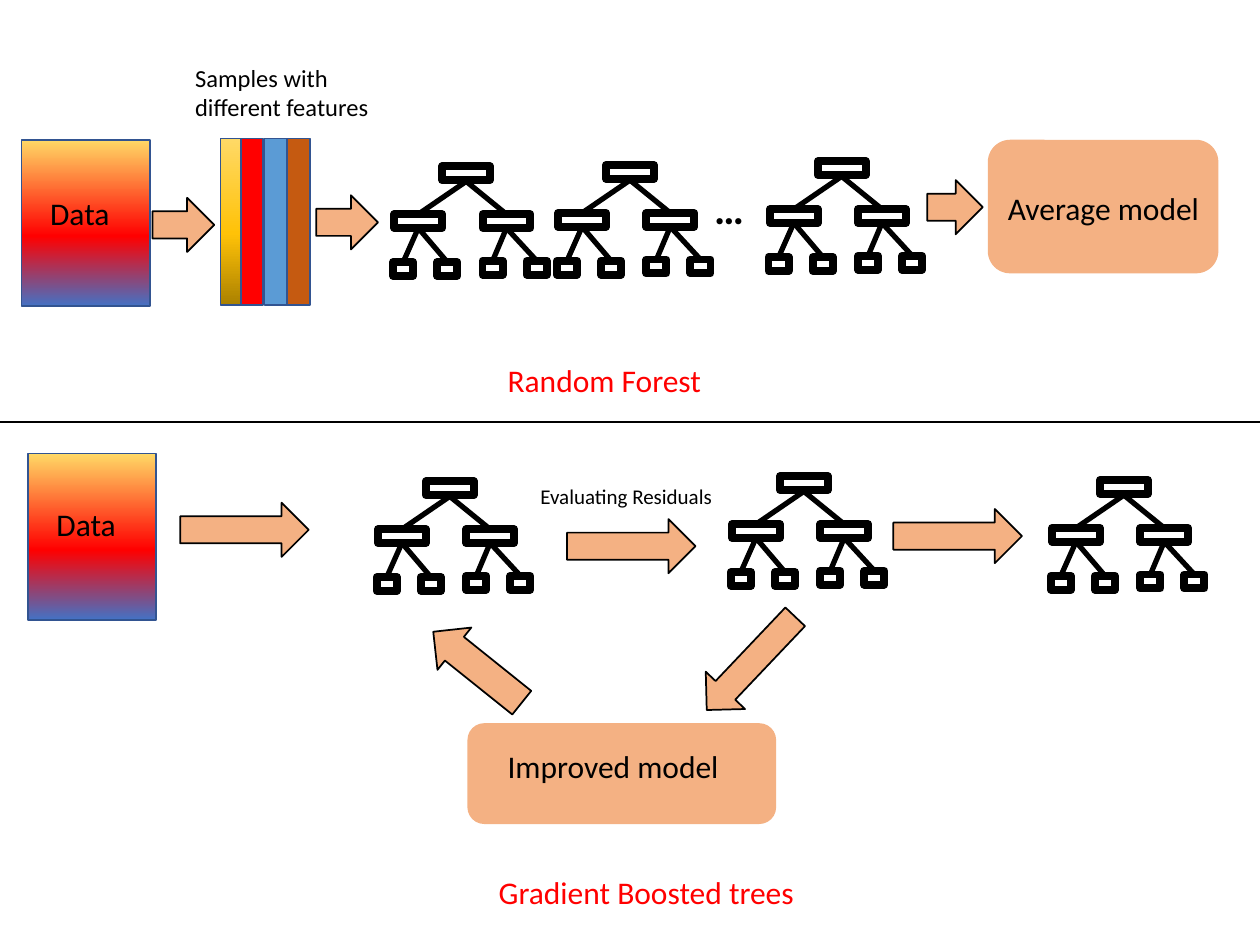
"""Builds a slide that sets random forest beside gradient boosted trees."""
from copy import deepcopy

from lxml.etree import SubElement
from pptx import Presentation
from pptx.dml.color import RGBColor
from pptx.enum.shapes import MSO_CONNECTOR, MSO_SHAPE
from pptx.enum.text import MSO_AUTO_SIZE
from pptx.oxml.ns import qn
from pptx.util import Pt

PX = 9144
HUES = {
    "ink": "000000", "paper": "FFFFFF", "peach": "F4B183", "edge": "325491",
    "red": "FF0000", "blue": "4472C4", "sand": "FFD966", "gold": "FFC208",
    "dark": "AB8100", "sky": "5B9BD5", "rust": "C55A11",
}
DATA = [(0, "blue"), (42, "red"), (100, "sand")]
GOLD = [(0, "dark"), (43, "gold"), (100, "sand")]


def hue(name):
    return RGBColor.from_string(HUES[name])


class Deck:
    def __init__(self, wide, high):
        self.show = Presentation()
        self.show.slide_width = wide * PX
        self.show.slide_height = high * PX
        self.slide = self.show.slides.add_slide(self.show.slide_layouts[6])
        self.font = "Calibri"

    def shape(self, kind, box, fill, line=None, width=1, home=None):
        home = home or self.slide.shapes
        item = home.add_shape(kind, *(n * PX for n in box))
        item.shadow.inherit = False
        if isinstance(fill, list):
            self.blend(item, fill)
        else:
            item.fill.solid()
            item.fill.fore_color.rgb = hue(fill)
        if line:
            item.line.color.rgb = hue(line)
            item.line.width = Pt(width)
        else:
            item.line.fill.background()
        return item

    def blend(self, item, stops):
        item.fill.gradient()
        item.fill.gradient_angle = 90
        first = item._element.xpath(".//a:gs")[0]
        first.addnext(deepcopy(first))
        for stop, (place, name) in zip(item.fill.gradient_stops, stops):
            stop.position = place / 100
            stop.color.rgb = hue(name)

    def rect(self, box, fill, line="edge", width=1, home=None):
        return self.shape(MSO_SHAPE.RECTANGLE, box, fill, line, width, home)

    def panel(self, *box):
        self.shape(MSO_SHAPE.ROUNDED_RECTANGLE, box, "peach")

    def arrow(self, left, top, wide, turn=0, shaft=0.5):
        item = self.shape(MSO_SHAPE.RIGHT_ARROW, (left, top, wide, 43), "peach", "ink")
        item.rotation = turn
        item.adjustments[0] = shaft

    def line(self, start, end, width=1, home=None):
        home = home or self.slide.shapes
        ends = [n * PX for n in (*start, *end)]
        item = home.add_connector(MSO_CONNECTOR.STRAIGHT, *ends)
        item.line.color.rgb = hue("ink")
        item.line.width = Pt(width)
        SubElement(item._element.spPr, qn("a:effectLst"))

    def text(self, words, box, size=18, color="ink", wrap=True, bold=False):
        frame = self.slide.shapes.add_textbox(*(n * PX for n in box)).text_frame
        frame.word_wrap = wrap
        frame.auto_size = MSO_AUTO_SIZE.SHAPE_TO_FIT_TEXT
        para = frame.paragraphs[0]
        para.text = words
        para.font.name = self.font
        para.font.size = Pt(size)
        para.font.bold = bold
        para.font.color.rgb = hue(color)

    def tree(self, left, top):
        home = self.slide.shapes.add_group_shape().shapes

        def node(x, y, wide):
            self.rect((left + x, top + y, wide, 11), "paper", "ink", 4.5, home)

        def link(start, end):
            ends = [(left + x, top + y) for x, y in (start, end)]
            self.line(*ends, width=3, home=home)

        node(0, 0, 38)
        for mid, low, leaves in ((-38, 76, (-39, -4)), (32, 75, (32, 67))):
            node(mid, 38, 38)
            link((19, 12), (mid + 19, 38))
            for leaf in leaves:
                node(leaf, low, 16)
                link((mid + 19, 49), (leaf + 8, low))

    def bands(self, top):
        home = self.slide.shapes.add_group_shape().shapes
        for left, fill in zip((175, 191, 210, 228), (GOLD, "red", "sky", "rust")):
            self.rect((left, top, 18, 132), fill, home=home)

    def save(self):
        self.show.save("out.pptx")


def main():
    deck = Deck(1000, 750)
    for spot in ((351, 132), (649, 128), (481, 131), (338, 382), (619, 378), (873, 381)):
        deck.tree(*spot)
    deck.text("…", (557, 140, 44, 50), 24, wrap=False, bold=True)

    deck.panel(371, 574, 245, 80)
    deck.text("Improved model", (393, 588, 192, 40))
    deck.panel(784, 111, 183, 106)
    deck.text("Average model", (790, 145, 192, 40))

    for left, top in ((17, 111), (22, 360)):
        deck.rect((left, top, 102, 132), DATA)
    deck.text("Data", (30, 149, 76, 40))
    deck.text("Data", (35, 396, 76, 40))
    deck.bands(110)

    for spot in ((121, 157, 49), (251, 155, 49), (736, 143, 44),
                 (143, 399, 102), (450, 412, 102), (709, 404, 102)):
        deck.arrow(*spot)
    deck.arrow(545, 505, 102, 133.5)
    deck.arrow(334, 508, 90, 218.7, 0.56)

    deck.text("Samples with different features", (145, 45, 172, 57), 14)
    deck.text("Evaluating Residuals", (419, 379, 158, 30), 12, wrap=False)
    deck.text("Random Forest", (393, 282, 175, 40), color="red", wrap=False)
    deck.text("Gradient Boosted trees", (386, 688, 257, 40), color="red", wrap=False)
    deck.line((0, 335), (1000, 335))
    deck.save()


if __name__ == "__main__":
    main()
